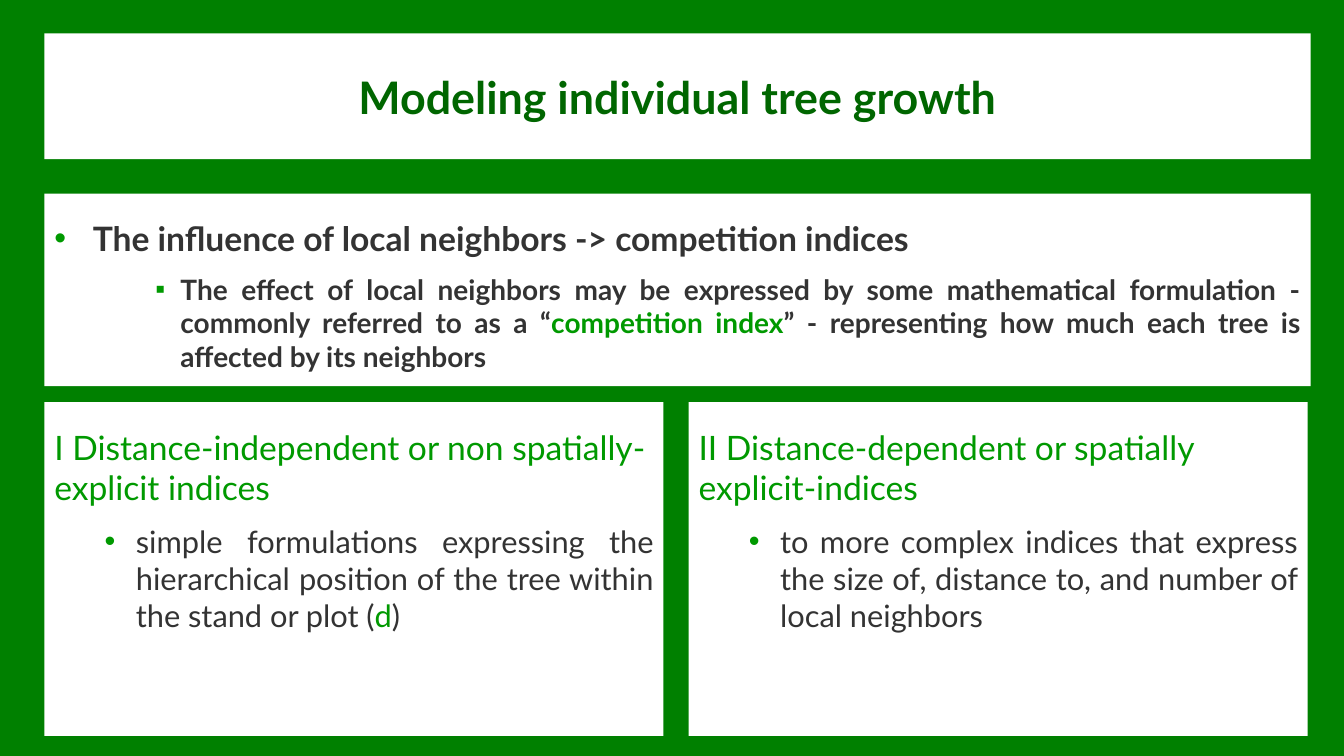
"""Builds the slide on competition indices in individual tree growth models."""
from lxml.etree import SubElement
from pptx import Presentation
from pptx.dml.color import RGBColor
from pptx.enum.text import MSO_ANCHOR, MSO_AUTO_SIZE, PP_ALIGN
from pptx.oxml.ns import qn
from pptx.util import Inches, Pt

FONT = "Lato"
BACKGROUND_GREEN = RGBColor(0x00, 0x80, 0x00)
TITLE_GREEN = RGBColor(0x00, 0x66, 0x00)
ACCENT_GREEN = RGBColor(0x00, 0x99, 0x00)
TEXT_GREY = RGBColor(0x33, 0x33, 0x33)
WHITE = RGBColor(0xFF, 0xFF, 0xFF)


def prepare_panel(shape, left, top, width, height, top_inset=0.24, anchor=MSO_ANCHOR.TOP):
    """Place a white panel and return its text frame."""
    shape.left, shape.top = Inches(left), Inches(top)
    shape.width, shape.height = Inches(width), Inches(height)
    shape.fill.solid()
    shape.fill.fore_color.rgb = WHITE
    frame = shape.text_frame
    frame.word_wrap = True
    frame.auto_size = MSO_AUTO_SIZE.NONE
    frame.vertical_anchor = anchor
    frame.margin_left = frame.margin_right = Inches(0.1)
    frame.margin_top, frame.margin_bottom = Inches(top_inset), Inches(0.05)
    return frame


def write_paragraph(frame, text, size, color=TEXT_GREY, bold=False, align=PP_ALIGN.JUSTIFY,
                    level=0, bullet=None, margin=0, hanging=0, space_before=0):
    """Write a paragraph; text between vertical bars takes the accent colour."""
    paragraph = frame.paragraphs[0] if not frame.text else frame.add_paragraph()
    paragraph.alignment = align
    paragraph.level = level
    paragraph.space_before = Pt(space_before)
    if bullet:
        properties = paragraph._p.get_or_add_pPr()
        properties.set("marL", str(Inches(margin)))
        properties.set("indent", str(-Inches(hanging)))
        bullet_color = SubElement(properties, qn("a:buClr"))
        SubElement(bullet_color, qn("a:srgbClr"), val=str(ACCENT_GREEN))
        SubElement(properties, qn("a:buFont"), typeface="Arial")
        SubElement(properties, qn("a:buChar"), char=bullet)
    for index, part in enumerate(text.split("|")):
        run = paragraph.add_run()
        run.text = part
        run.font.name, run.font.size, run.font.bold = FONT, Pt(size), bold
        run.font.color.rgb = ACCENT_GREEN if index % 2 else color


presentation = Presentation()
presentation.slide_width, presentation.slide_height = Inches(13.33), Inches(7.5)
slide = presentation.slides.add_slide(presentation.slide_layouts[1])
slide.background.fill.solid()
slide.background.fill.fore_color.rgb = BACKGROUND_GREEN

title = prepare_panel(slide.shapes.title, 0.44, 0.33, 12.56, 1.25,
                      top_inset=0.05, anchor=MSO_ANCHOR.MIDDLE)
write_paragraph(title, "Modeling individual tree growth", 32, color=TITLE_GREEN,
                bold=True, align=PP_ALIGN.CENTER)

body = prepare_panel(slide.placeholders[1], 0.44, 1.92, 12.56, 1.91)
write_paragraph(body, "The influence of local neighbors -> competition indices", 24,
                bold=True, bullet="•", margin=0.38, hanging=0.38)
write_paragraph(body, "The effect of local neighbors may be expressed by some mathematical "
                "formulation - commonly referred to as a “|competition index|” - representing "
                "how much each tree is affected by its neighbors", 20, bold=True,
                level=2, bullet="▪", margin=1.25, hanging=0.25, space_before=10)

index_families = [
    (0.44, "I Distance-independent or non spatially-explicit indices",
     "simple formulations expressing the hierarchical position of the tree within "
     "the stand or plot (|d|)"),
    (6.83, "II Distance-dependent or spatially explicit-indices",
     "to more complex indices that express the size of, distance to, and number of "
     "local neighbors"),
]
for left, heading, description in index_families:
    box = slide.shapes.add_textbox(0, 0, 0, 0)
    family = prepare_panel(box, left, 3.99, 6.14, 3.31)
    write_paragraph(family, heading, 24, color=ACCENT_GREEN, align=PP_ALIGN.LEFT)
    write_paragraph(family, description, 22, level=1, bullet="•",
                    margin=0.81, hanging=0.31, space_before=11)

presentation.save("out.pptx")
